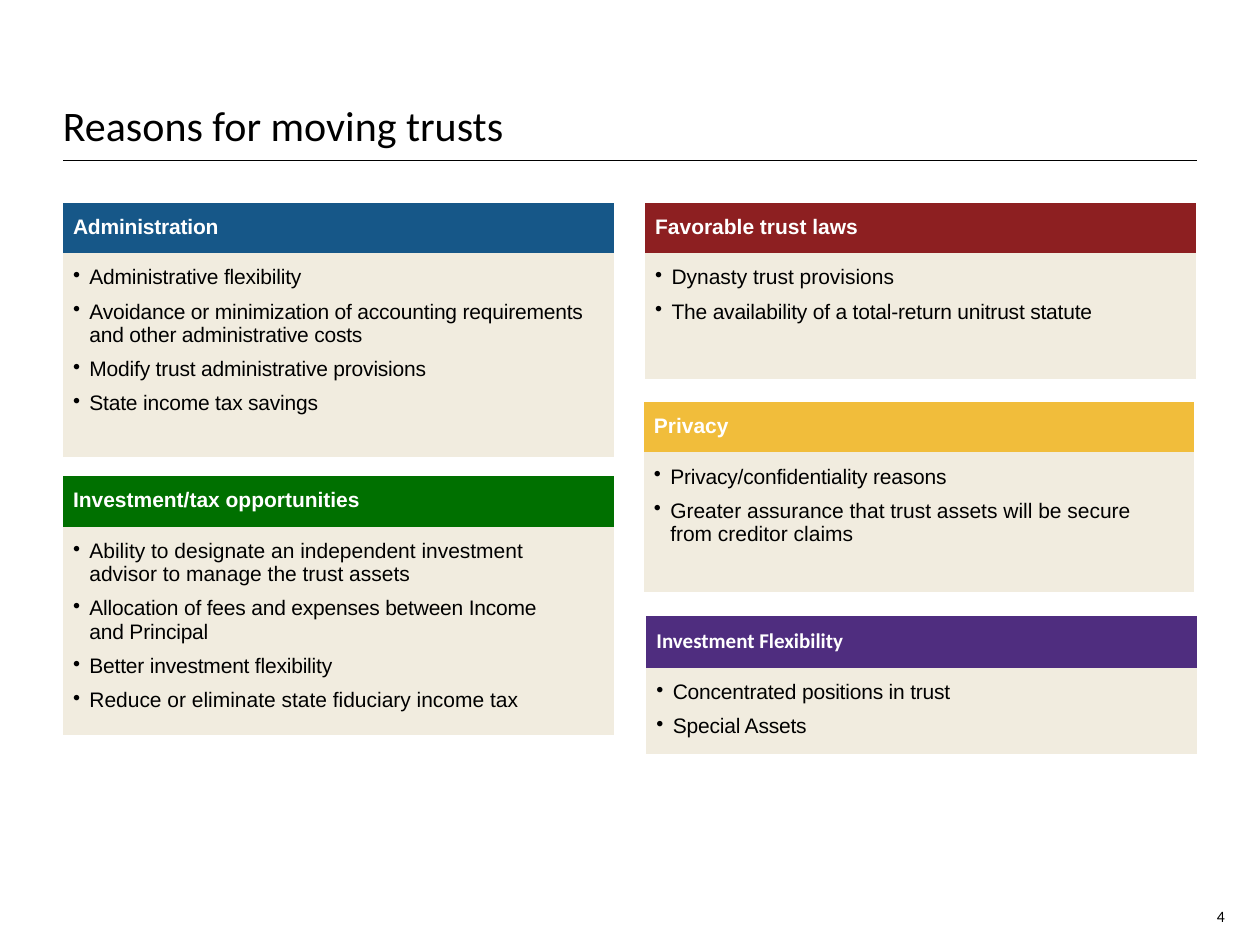
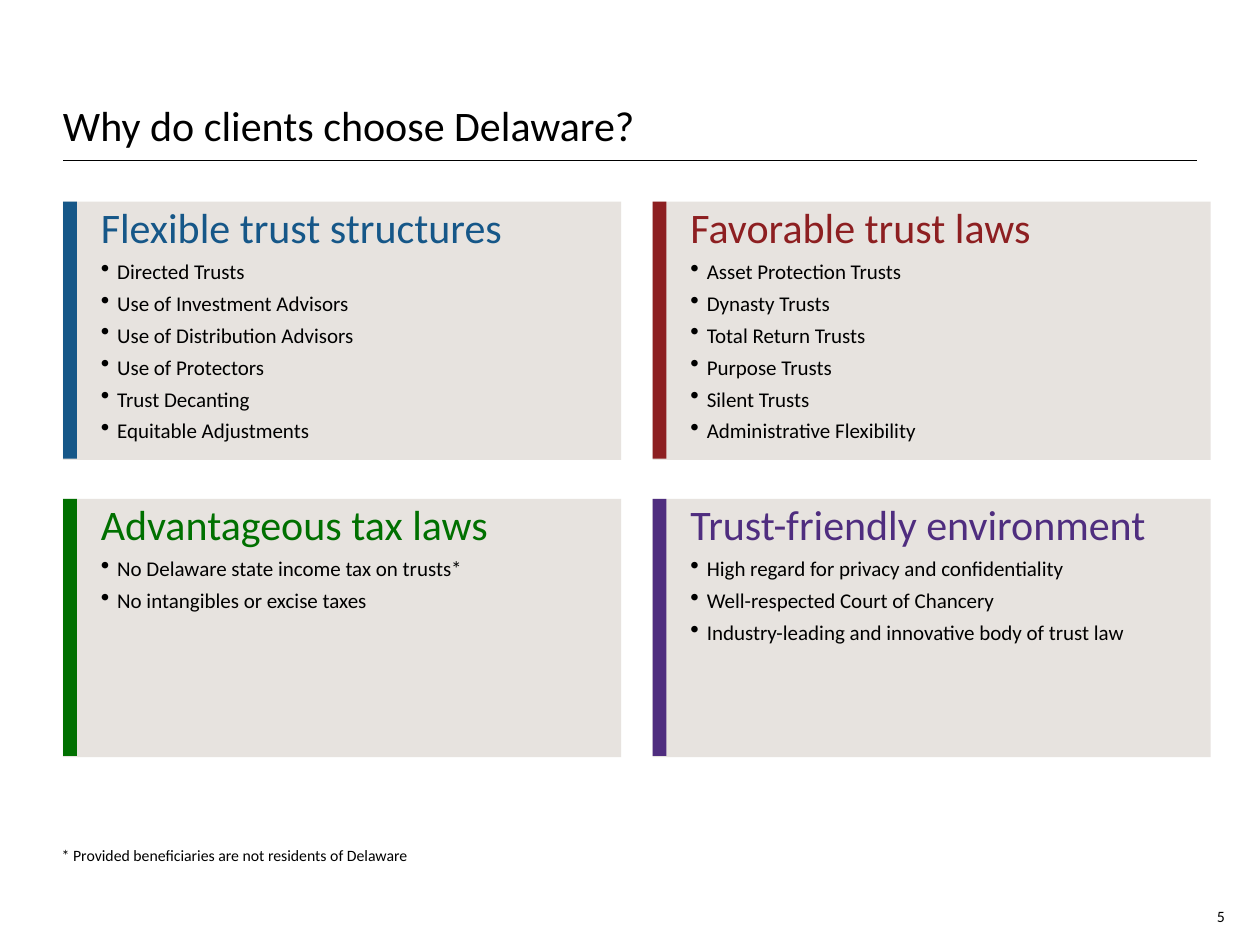
from dataclasses import dataclass
from lxml.etree import SubElement
from pptx import Presentation
from pptx.dml.color import RGBColor
from pptx.enum.shapes import MSO_CONNECTOR, MSO_SHAPE
from pptx.enum.text import MSO_ANCHOR, PP_ALIGN
from pptx.oxml.ns import qn
from pptx.util import Inches, Pt


@dataclass(frozen=True)
class Theme:
    black: str = "000000"
    white: str = "FFFFFF"
    blue: str = "165788"
    red: str = "8D1F21"
    green: str = "007000"
    gold: str = "F1BD3B"
    purple: str = "4F2D7F"
    cream: str = "F1ECDF"
    stone: str = "E7E3DF"
    head: int = 24
    body: int = 12
    small: int = 9
    sans: str = "Calibri"
    plain: str = "Arial"


theme = Theme()


def write(para, text, size, color, face=theme.sans, bold=False, tight=False):
    """Add text as runs, with a line break at each newline."""
    for i, part in enumerate(text.split("\n")):
        if i:
            para.add_line_break()
        run = para.add_run()
        run.text = part
        font = run.font
        font.size, font.name, font.bold = Pt(size), face, bold
        font.color.rgb = RGBColor.from_string(color)
        if tight:
            run._r.get_or_add_rPr().set("spc", "-10")


def bullet(para, scale=100):
    """Give the paragraph a hanging bullet, sized in percent of its text."""
    props = para._p.get_or_add_pPr()
    props.set("marL", str(Inches(0.13)))
    props.set("indent", str(-Inches(0.13)))
    SubElement(props, qn("a:buSzPct"), val=str(scale * 1000))
    SubElement(props, qn("a:buChar"), char="•")


deck = Presentation()
deck.slide_width, deck.slide_height = Inches(10), Inches(7.5)

# Shared frame: rule, title, page number and an optional footnote
pages = []
for num, title, note in [
    ("4", "Reasons for moving trusts", ""),
    ("5", "Why do clients choose Delaware?",
     "* Provided beneficiaries are not residents of Delaware"),
]:
    page = deck.slides.add_slide(deck.slide_layouts[6])
    pages.append(page)
    rule = page.shapes.add_connector(
        MSO_CONNECTOR.STRAIGHT, Inches(0.5), Inches(1.27), Inches(9.5), Inches(1.27))
    rule.line.color.rgb = RGBColor.from_string(theme.black)
    rule.line.width = Pt(0.5)
    SubElement(rule._element.spPr, qn("a:effectLst"))

    for text, spot, size, align, top, base in [
        (title, (0.5, 0.34, 9, 0.93), theme.head, PP_ALIGN.LEFT, 0.05, 0.08),
        (num, (9.33, 7.1, 0.39, 0.25), theme.small, PP_ALIGN.RIGHT, 0, 0),
        (note, (0.49, 6.36, 4.6, 0.5), theme.small, PP_ALIGN.LEFT, 0, 0),
    ]:
        if not text:
            continue
        frame = page.shapes.add_textbox(*map(Inches, spot)).text_frame
        frame.word_wrap = True
        frame.vertical_anchor = MSO_ANCHOR.BOTTOM
        frame.margin_left = frame.margin_right = 0
        frame.margin_top, frame.margin_bottom = Inches(top), Inches(base)
        para = frame.paragraphs[0]
        para.alignment = align
        write(para, text, size, theme.black)

reasons, clients = pages

# Reasons: left, top, row heights, colour, heading face, heading, points,
# and the places (heading = 0) of the lines with tighter letters
cards = [
    (0.5, 1.61, 0.39, 1.62, theme.blue, theme.plain, "Administration", [
        "Administrative flexibility",
        "Avoidance or minimization of accounting requirements and other administrative costs",
        "Modify trust administrative provisions",
        "State income tax savings"], range(5)),
    (5.12, 1.61, 0.39, 1, theme.red, theme.plain, "Favorable trust laws", [
        "Dynasty trust provisions",
        "The availability of a total-return unitrust statute"], [2]),
    (0.5, 3.78, 0.39, 1.62, theme.green, theme.plain, "Investment/tax opportunities", [
        "Ability to designate an independent investment\nadvisor to manage the trust assets",
        "Allocation of fees and expenses between Income\nand Principal",
        "Better investment flexibility",
        "Reduce or eliminate state fiduciary income tax"], [2, 3]),
    (5.11, 3.19, 0.39, 1.11, theme.gold, theme.plain, "Privacy", [
        "Privacy/confidentiality reasons",
        "Greater assurance that trust assets will be secure\nfrom creditor claims"], [1]),
    (5.13, 4.89, 0.41, 0.66, theme.purple, theme.sans, "Investment Flexibility", [
        "Concentrated positions in trust",
        "Special Assets"], [1, 2]),
]
for left, top, high, deep, color, face, head, points, tight in cards:
    frame = reasons.shapes.add_table(
        2, 1, Inches(left), Inches(top), Inches(4.37), Inches(high + deep))
    table = frame.table
    table.first_row = table.horz_banding = False
    for style in frame._element.iter(qn("a:tableStyleId")):
        style.text = "{2D5ABB26-0587-4C30-8999-92F81FD0307C}"
    for row, tall, fill in zip(table.rows, (high, deep), (color, theme.cream)):
        row.height = Inches(tall)
        cell = row.cells[0]
        cell.fill.solid()
        cell.fill.fore_color.rgb = RGBColor.from_string(fill)
        cell.margin_left = cell.margin_right = Inches(0.08)
        cell.margin_top = cell.margin_bottom = Inches(0.1)
    write(table.cell(0, 0).text_frame.paragraphs[0], head, theme.body,
          theme.white, face, True, 0 in tight)
    body = table.cell(1, 0).text_frame
    for i, point in enumerate(points, 1):
        para = body.paragraphs[0] if i == 1 else body.add_paragraph()
        bullet(para)
        para.space_after = Pt(6)
        write(para, point, theme.body, theme.black, theme.plain, tight=i in tight)

# Clients: a two by two grid of panels, each with a colour bar
panels = [
    (theme.blue, "Flexible trust structures", [
        "Directed Trusts", "Use of Investment Advisors", "Use of Distribution Advisors",
        "Use of Protectors", "Trust Decanting", "Equitable Adjustments"]),
    (theme.red, "Favorable trust laws", [
        "Asset Protection Trusts", "Dynasty Trusts", "Total Return Trusts",
        "Purpose Trusts", "Silent Trusts", "Administrative Flexibility"]),
    (theme.green, "Advantageous tax laws", [
        "No Delaware state income tax on trusts*", "No intangibles or excise taxes"]),
    (theme.purple, "Trust-friendly environment", [
        "High regard for privacy and confidentiality", "Well-respected Court of Chancery",
        "Industry-leading and innovative body of trust law"]),
]
for i, (color, head, points) in enumerate(panels):
    left, top = 0.5 + i % 2 * 4.68, 1.6 + i // 2 * 2.36
    for wide, tall, fill in [(4.43, 2.05, theme.stone), (0.11, 2.04, color)]:
        shape = clients.shapes.add_shape(
            MSO_SHAPE.RECTANGLE, Inches(left), Inches(top), Inches(wide), Inches(tall))
        shape.shadow.inherit = False
        shape.fill.solid()
        shape.fill.fore_color.rgb = RGBColor.from_string(fill)
        shape.line.fill.background()
        if fill == color:
            continue
        frame = shape.text_frame
        frame.word_wrap = True
        frame.vertical_anchor = MSO_ANCHOR.TOP
        frame.margin_left = frame.margin_right = Inches(0.3)
        frame.margin_top = frame.margin_bottom = 0
        para = frame.paragraphs[0]
        para.alignment = PP_ALIGN.LEFT
        write(para, head, theme.head, color)
        for point in points:
            para = frame.add_paragraph()
            bullet(para, 120)
            para.alignment = PP_ALIGN.LEFT
            para.space_before = Pt(3.8)
            write(para, point, theme.body, theme.black)

deck.save("out.pptx")
